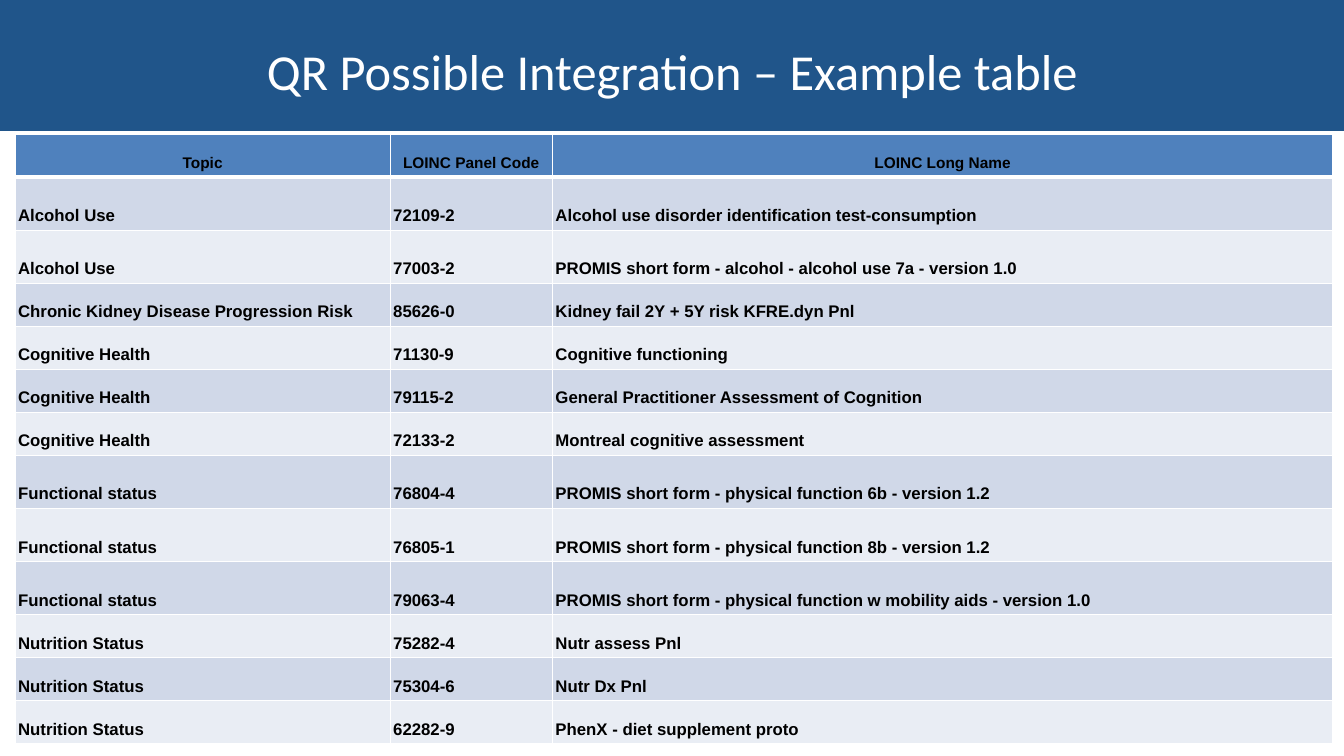
from lxml.etree import SubElement
from pptx import Presentation
from pptx.dml.color import RGBColor
from pptx.enum.shapes import MSO_SHAPE
from pptx.enum.text import MSO_ANCHOR, PP_ALIGN
from pptx.oxml.ns import qn
from pptx.util import Inches, Pt

TITLE = "QR Possible Integration – Example table"
HEADER = ("Topic", "LOINC Panel Code", "LOINC Long Name")
PANELS = [
    ("Alcohol Use", "72109-2", "Alcohol use disorder identification test-consumption"),
    ("Alcohol Use", "77003-2", "PROMIS short form - alcohol - alcohol use 7a - version 1.0"),
    ("Chronic Kidney Disease Progression Risk", "85626-0", "Kidney fail 2Y + 5Y risk KFRE.dyn Pnl"),
    ("Cognitive Health", "71130-9", "Cognitive functioning"),
    ("Cognitive Health", "79115-2", "General Practitioner Assessment of Cognition"),
    ("Cognitive Health", "72133-2", "Montreal cognitive assessment"),
    ("Functional status", "76804-4", "PROMIS short form - physical function 6b - version 1.2"),
    ("Functional status", "76805-1", "PROMIS short form - physical function 8b - version 1.2"),
    ("Functional status", "79063-4", "PROMIS short form - physical function w mobility aids - version 1.0"),
    ("Nutrition Status", "75282-4", "Nutr assess Pnl"),
    ("Nutrition Status", "75304-6", "Nutr Dx Pnl"),
    ("Nutrition Status", "62282-9", "PhenX - diet supplement proto"),
]
TALL_TOPICS = ("Alcohol Use", "Functional status")
COLUMN_WIDTHS = (3.72, 1.61, 7.74)
TABLE_LEFT, TABLE_TOP, TABLE_HEIGHT = 0.15, 1.33, 6.05
SHORT_ROW, TALL_ROW = 0.43, 0.53
COLORS = {
    "banner": "20558A",
    "header": "4F81BD",
    "odd": "D0D8E8",
    "even": "E9EDF4",
    "white": "FFFFFF",
    "black": "000000",
}
TITLE_FONT = {"name": "Calibri", "size": Pt(36)}
HEADER_FONT = {"name": "Arial", "size": Pt(11), "bold": True}
PANEL_FONT = HEADER_FONT | {"size": Pt(12)}
CELL_FORMAT = {
    "vertical_anchor": MSO_ANCHOR.BOTTOM,
    "margin_left": Inches(0.03),
    "margin_right": Inches(0.03),
    "margin_top": Inches(0.05),
    "margin_bottom": Inches(0.05),
}


def set_values(target, values):
    for name, value in values.items():
        setattr(target, name, value)


def set_fill(target, color):
    target.fill.solid()
    target.fill.fore_color.rgb = RGBColor.from_string(COLORS[color])


def write_text(paragraph, text, font, color, alignment):
    paragraph.alignment = alignment
    run = paragraph.add_run()
    run.text = text
    set_values(run.font, font)
    run.font.color.rgb = RGBColor.from_string(COLORS[color])


def add_borders(cell, row_index):
    properties = cell._tc.get_or_add_tcPr()
    widths = {
        "lnL": 1,
        "lnR": 1,
        "lnT": 3 if row_index == 1 else 1,
        "lnB": 3 if row_index == 0 else 1,
    }
    for side, width in widths.items():
        line = SubElement(properties, qn(f"a:{side}"), w=str(Pt(width)))
        solid = SubElement(line, qn("a:solidFill"))
        SubElement(solid, qn("a:srgbClr"), val=COLORS["white"])


def add_banner(slide):
    banner = slide.shapes.add_shape(MSO_SHAPE.RECTANGLE, 0, 0, Inches(13.33), Inches(1.3))
    banner.shadow.inherit = False
    set_fill(banner, "banner")
    banner.line.fill.background()
    title = slide.shapes.add_textbox(Inches(0.67), Inches(0.2), Inches(12), Inches(1))
    set_values(title.text_frame, {"word_wrap": True, "vertical_anchor": MSO_ANCHOR.MIDDLE})
    write_text(title.text_frame.paragraphs[0], TITLE, TITLE_FONT, "white", PP_ALIGN.CENTER)


def add_panel_table(slide):
    rows = [HEADER, *PANELS]
    heights = [TALL_ROW if row[0] in TALL_TOPICS else SHORT_ROW for row in rows]
    scale = TABLE_HEIGHT / sum(heights)
    table = slide.shapes.add_table(
        len(rows), len(HEADER), Inches(TABLE_LEFT), Inches(TABLE_TOP),
        Inches(sum(COLUMN_WIDTHS)), Inches(TABLE_HEIGHT),
    ).table
    for column, width in zip(table.columns, COLUMN_WIDTHS):
        column.width = Inches(width)
    for row_index, (row, height) in enumerate(zip(rows, heights)):
        table.rows[row_index].height = Inches(height * scale)
        if row_index == 0:
            fill, font, alignment = "header", HEADER_FONT, PP_ALIGN.CENTER
        else:
            fill = "odd" if row_index % 2 else "even"
            font, alignment = PANEL_FONT, PP_ALIGN.LEFT
        for column_index, text in enumerate(row):
            cell = table.cell(row_index, column_index)
            set_values(cell, CELL_FORMAT)
            add_borders(cell, row_index)
            set_fill(cell, fill)
            write_text(cell.text_frame.paragraphs[0], text, font, "black", alignment)


def main():
    presentation = Presentation()
    set_values(presentation, {"slide_width": Inches(13.33), "slide_height": Inches(7.5)})
    slide = presentation.slides.add_slide(presentation.slide_layouts[6])
    add_banner(slide)
    add_panel_table(slide)
    presentation.save("out.pptx")


if __name__ == "__main__":
    main()
